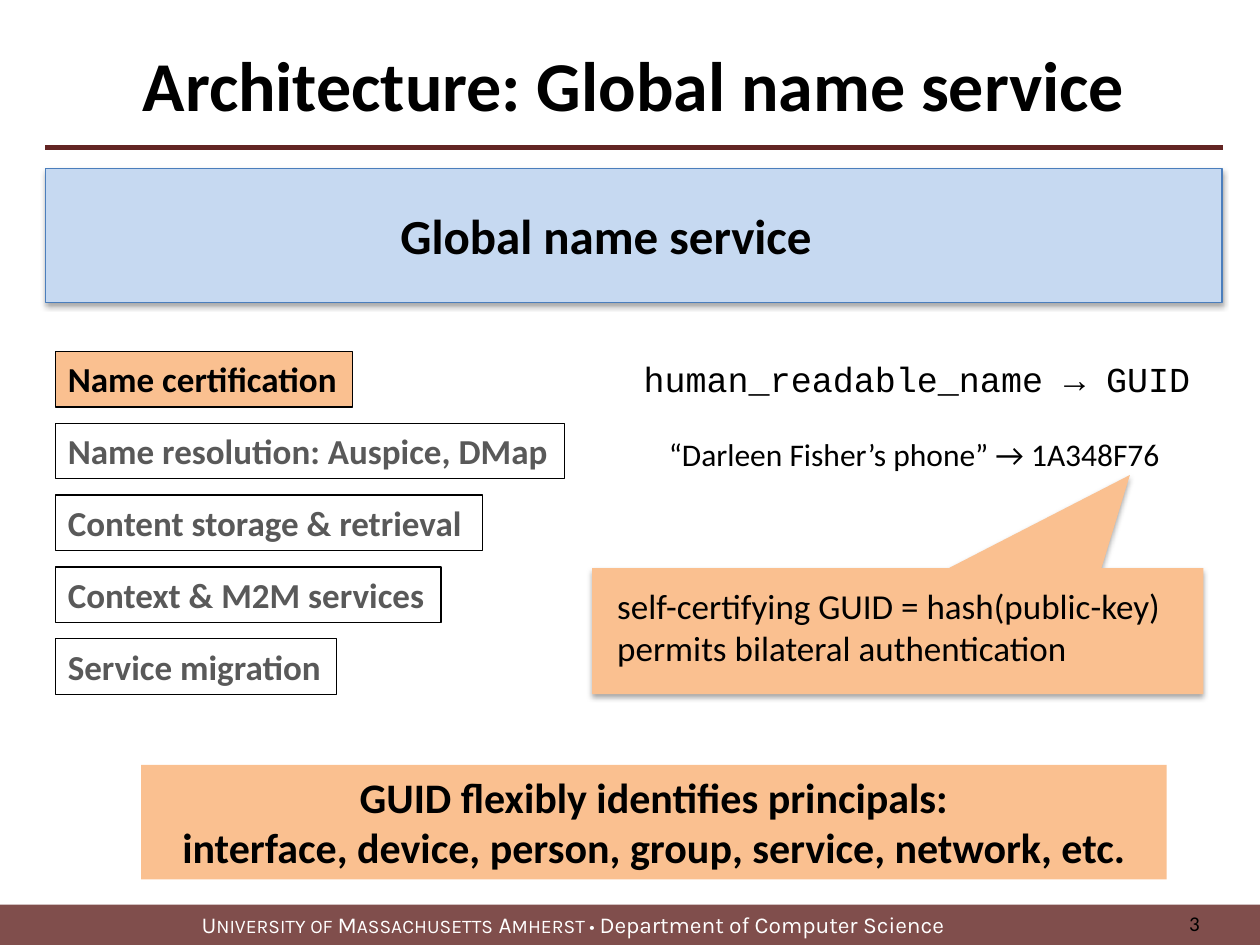
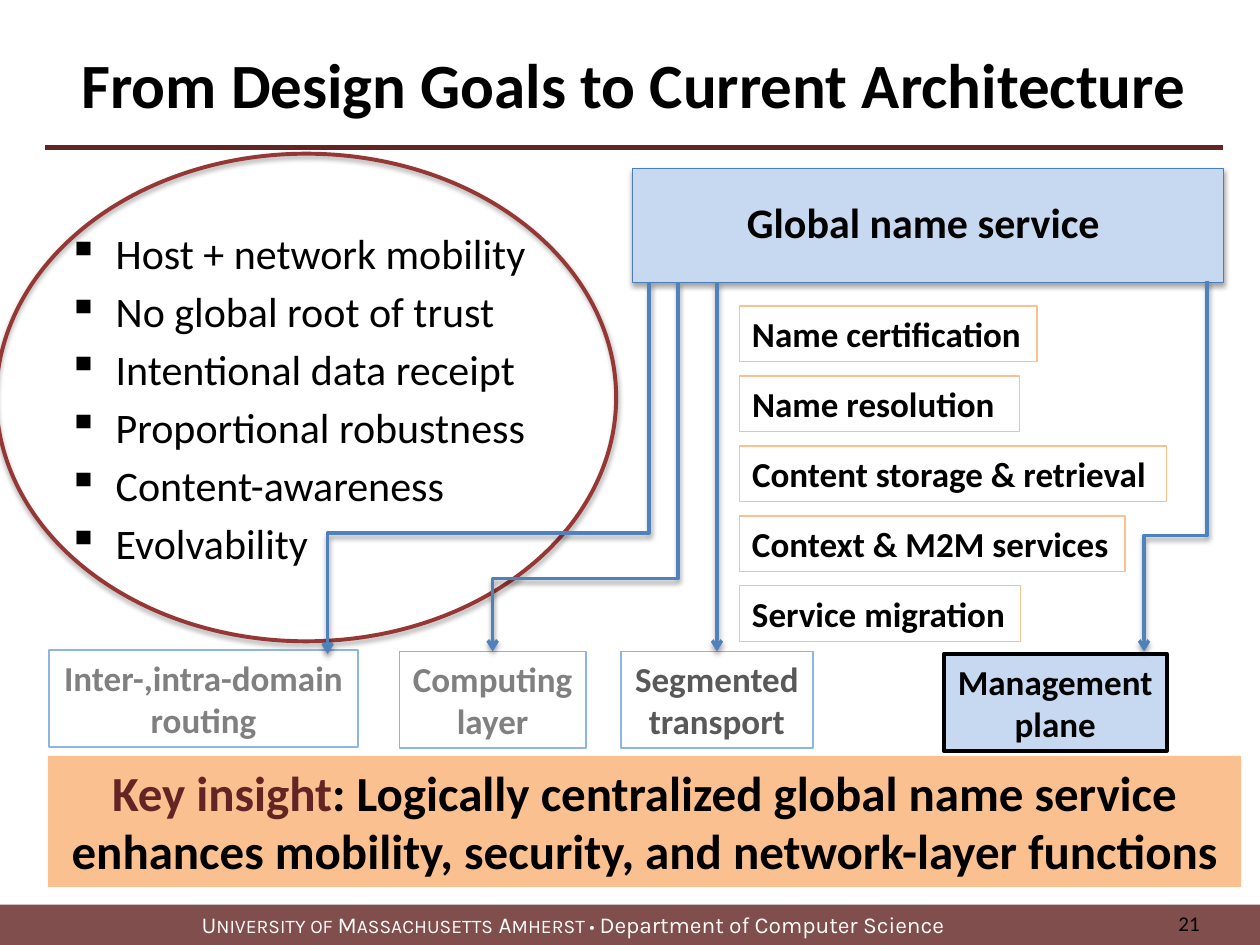
from lxml import etree
from pptx import Presentation
from pptx.dml.color import RGBColor
from pptx.enum.shapes import MSO_CONNECTOR, MSO_SHAPE
from pptx.enum.text import MSO_ANCHOR, PP_ALIGN
from pptx.oxml.ns import qn
from pptx.util import Inches, Pt

RECTANGLE, ELLIPSE = MSO_SHAPE.RECTANGLE, MSO_SHAPE.OVAL
CALLOUT = MSO_SHAPE.RECTANGULAR_CALLOUT
STRAIGHT, ELBOW = MSO_CONNECTOR.STRAIGHT, MSO_CONNECTOR.ELBOW
LEFT, CENTER, RIGHT = PP_ALIGN.LEFT, PP_ALIGN.CENTER, PP_ALIGN.RIGHT
TOP, MIDDLE = MSO_ANCHOR.TOP, MSO_ANCHOR.MIDDLE

BLACK, WHITE, DARK_GREY, GREY = "000000", "FFFFFF", "595959", "808080"
MAROON, RED, ORANGE = "632523", "953735", "FAC090"
PALE_BLUE, EDGE_BLUE, LIGHT_BLUE, ARROW_BLUE = "C6D9F1", "4B7EBC", "8EB4E3", "4F81BD"

FOOTER = [[("U", 13), ("NIVERSITY OF ", 11), ("M", 13), ("ASSACHUSETTS", 11),
           (" A", 13), ("MHERST • ", 11), ("Department of Computer Science", 13)]]

SERVICE_WIDTHS = {
    "Name certification": 2.36,
    "Name resolution: Auspice, DMap": 4.04,
    "Name resolution": 2.22,
    "Content storage & retrieval": 3.39,
    "Context & M2M services": 3.06,
    "Service migration": 2.23,
}
DETAILED_SERVICES = ["Name certification", "Name resolution: Auspice, DMap",
                     "Content storage & retrieval", "Context & M2M services", "Service migration"]
SERVICES = ["Name certification", "Name resolution",
            "Content storage & retrieval", "Context & M2M services", "Service migration"]
PRINCIPALS = ["GUID flexibly identifies principals:",
              "interface, device, person, group, service, network, etc."]
CERTIFYING = "self-certifying GUID = hash(public-key) permits bilateral authentication"
GOALS = ["Host + network mobility", "No global root of trust", "Intentional data receipt",
         "Proportional robustness", "Content-awareness", "Evolvability"]
INSIGHT = [[("Key insight", 28, MAROON), (": Logically centralized global name service", 28)],
           "enhances mobility, security, and network-layer functions"]
LAYERS = [
    (["Inter-,intra-domain", "routing"], (0.39, 5.16, 2.45, 0.77), {"color": GREY}),
    (["Computing", "layer"], (3.17, 5.17, 1.48, 0.77), {"color": GREY}),
    (["Segmented", "transport"], (4.93, 5.17, 1.52, 0.77), {"color": DARK_GREY}),
    (["Management", "plane"], (7.49, 5.19, 1.77, 0.77),
     {"fill": PALE_BLUE, "line": BLACK, "line_width": 2.25}),
]
BENT_ARROWS = [((5.15, 2.24), (2.6, 5.19), 0.674),
               ((5.38, 2.24), (3.91, 5.17), 0.803),
               ((9.58, 2.23), (9.08, 5.17), 0.687)]


def rgb(color):
    return RGBColor.from_string(color)


def add_child(parent, tag, **attributes):
    child = etree.SubElement(parent, qn(tag))
    for name, value in attributes.items():
        child.set(name, str(value))
    return child


def set_alpha(color_element, percent):
    add_child(color_element, "a:alpha", val=percent * 1000)


def add_shadow(shape, opacity):
    effects = add_child(shape._element.spPr, "a:effectLst")
    shadow = add_child(effects, "a:outerShdw", blurRad=Pt(3.1), dist=Pt(1.8),
                       dir=5400000, rotWithShape=0)
    set_alpha(add_child(shadow, "a:srgbClr", val=BLACK), opacity)


def write(shape, text, size=20, color=BLACK, bold=False, font="Calibri", align=LEFT,
          anchor=TOP, wrap=True, left_inset=0.1, bullet=None, gap=0):
    frame = shape.text_frame
    frame.word_wrap = wrap
    frame.vertical_anchor = anchor
    frame.margin_left = Inches(left_inset)
    lines = [text] if isinstance(text, str) else text
    for index, line in enumerate(lines):
        paragraph = frame.paragraphs[0] if index == 0 else frame.add_paragraph()
        paragraph.alignment = align
        if index and gap:
            paragraph.space_before = Pt(gap)
        if bullet:
            properties = paragraph._p.get_or_add_pPr()
            properties.set("marL", str(Inches(0.38)))
            properties.set("indent", str(-Inches(0.38)))
            add_child(properties, "a:buChar", char=bullet)
        for part in [(line,)] if isinstance(line, str) else line:
            run = paragraph.add_run()
            run.text = part[0]
            run.font.name = font
            run.font.size = Pt(part[1] if len(part) > 1 else size)
            run.font.bold = bold
            run.font.color.rgb = rgb(part[2] if len(part) > 2 else color)


def add_text(slide, text, at, **text_format):
    write(slide.shapes.add_textbox(*map(Inches, at)), text, **text_format)


def add_box(slide, at, text=None, kind=RECTANGLE, fill=None, line=None, line_width=0.75,
            shadow=False, **text_format):
    shape = slide.shapes.add_shape(kind, *map(Inches, at))
    if fill:
        shape.fill.solid()
        shape.fill.fore_color.rgb = rgb(fill)
    else:
        shape.fill.background()
    if line:
        shape.line.color.rgb = rgb(line)
        shape.line.width = Pt(line_width)
    else:
        shape.line.fill.background()
    if shadow:
        add_shadow(shape, 35)
    else:
        shape.shadow.inherit = False
    if text:
        write(shape, text, **text_format)
    return shape


def add_line(slide, kind, start, end, color, width):
    connector = slide.shapes.add_connector(kind, *map(Inches, start + end))
    connector.line.color.rgb = rgb(color)
    connector.line.width = Pt(width)
    return connector


def add_arrow(slide, kind, start, end):
    arrow = add_line(slide, kind, start, end, ARROW_BLUE, 2)
    add_child(arrow.line._get_or_add_ln(), "a:tailEnd", type="arrow")
    add_shadow(arrow, 38)
    return arrow


def add_bent_arrow(slide, start, end, bend):
    across, down = start[0] - end[0], end[1] - start[1]
    left = (start[0] + end[0] - down) / 2
    top = (start[1] + end[1] - across) / 2
    arrow = add_arrow(slide, ELBOW, (left, top), (left + down, top + across))
    properties = arrow._element.spPr
    properties.find(qn("a:xfrm")).set("rot", "5400000")
    geometry = properties.find(qn("a:prstGeom"))
    adjustments = geometry.find(qn("a:avLst"))
    if adjustments is None:
        adjustments = add_child(geometry, "a:avLst")
    add_child(adjustments, "a:gd", name="adj1", fmla=f"val {round(bend * 100000)}")


def add_base_slide(presentation, title, title_size):
    slide = presentation.slides.add_slide(presentation.slide_layouts[6])
    rule = add_line(slide, STRAIGHT, (0.36, 1.17), (9.71, 1.17), MAROON, 3)
    add_child(rule._element.spPr, "a:effectLst")
    band = add_box(slide, (0, 7.18, 10, 0.33), FOOTER, fill=MAROON, font="Karla",
                   color=WHITE, left_inset=1.6)
    set_alpha(band._element.spPr.find(qn("a:solidFill"))[0], 81)
    add_text(slide, title, (0.36, 0.21, 9.34, 0.91), size=title_size, bold=True,
             align=CENTER, anchor=MIDDLE)
    return slide


def add_page_number(slide, number):
    add_text(slide, str(number), (7.29, 7.13, 2.33, 0.4), size=12, align=RIGHT, anchor=MIDDLE)


def add_name_service(slide, at, label_at, size):
    add_box(slide, at, fill=PALE_BLUE, line=EDGE_BLUE, shadow=True)
    add_text(slide, "Global name service", label_at, size=size, bold=True, wrap=False)


def add_services(slide, names, left, top, step, line, color, highlight=None):
    for row, name in enumerate(names):
        chosen = name == highlight
        add_box(slide, (left, top + row * step, SERVICE_WIDTHS[name], 0.44), name, line=line,
                fill=ORANGE if chosen else None, color=BLACK if chosen else color,
                bold=True, wrap=False)


def build_name_service(presentation):
    slide = add_base_slide(presentation, "Architecture: Global name service", 40)
    add_name_service(slide, (0.36, 1.34, 9.34, 1.06), (3.08, 1.58, 3.5, 0.57), 28)
    add_services(slide, DETAILED_SERVICES, 0.44, 2.79, 0.57, BLACK, DARK_GREY,
                 highlight="Name certification")
    add_text(slide, "human_readable_name → GUID", (5.01, 2.79, 4.68, 0.44),
             font="Courier New", wrap=False)
    add_text(slide, "“Darleen Fisher’s phone” → 1A348F76", (5.21, 3.4, 4.16, 0.4),
             size=18, wrap=False)
    callout = add_box(slide, (4.7, 4.51, 4.85, 1), kind=CALLOUT, fill=ORANGE, shadow=True)
    callout.adjustments[0], callout.adjustments[1] = 0.38, -1.24
    add_text(slide, CERTIFYING, (4.8, 4.59, 4.71, 1.11))
    add_box(slide, (1.12, 6.07, 8.14, 0.91), PRINCIPALS, fill=ORANGE, size=24, bold=True,
            align=CENTER)
    add_page_number(slide, 3)


def build_current_architecture(presentation):
    slide = add_base_slide(presentation, "From Design Goals to Current Architecture", 36)
    add_text(slide, GOALS, (0.44, 1.76, 9.34, 5.12), size=24, bullet="▪", gap=4.3)
    add_name_service(slide, (5.02, 1.34, 4.69, 0.9), (5.83, 1.51, 3.03, 0.5), 24)
    add_services(slide, SERVICES, 5.87, 2.43, 0.555, ORANGE, BLACK)
    add_box(slide, (-0.03, 1.22, 4.92, 3.87), kind=ELLIPSE, line=RED, line_width=2.25,
            shadow=True)
    add_box(slide, (0.38, 6, 9.47, 1.04), INSIGHT, fill=ORANGE, size=28, bold=True,
            align=CENTER, wrap=False)
    layers = {}
    for text, at, style in LAYERS:
        look = {"line": LIGHT_BLUE, "line_width": 1, **style}
        layers[text[0]] = add_box(slide, at, text, bold=True, align=CENTER, wrap=False, **look)
    transport_arrow = add_arrow(slide, STRAIGHT, (5.69, 2.24), (5.69, 5.17))
    transport_arrow.end_connect(layers["Segmented"], 0)
    for start, end, bend in BENT_ARROWS:
        add_bent_arrow(slide, start, end, bend)
    add_page_number(slide, 21)


def main():
    presentation = Presentation()
    presentation.slide_width, presentation.slide_height = Inches(10), Inches(7.5)
    build_name_service(presentation)
    build_current_architecture(presentation)
    presentation.save("out.pptx")


if __name__ == "__main__":
    main()
